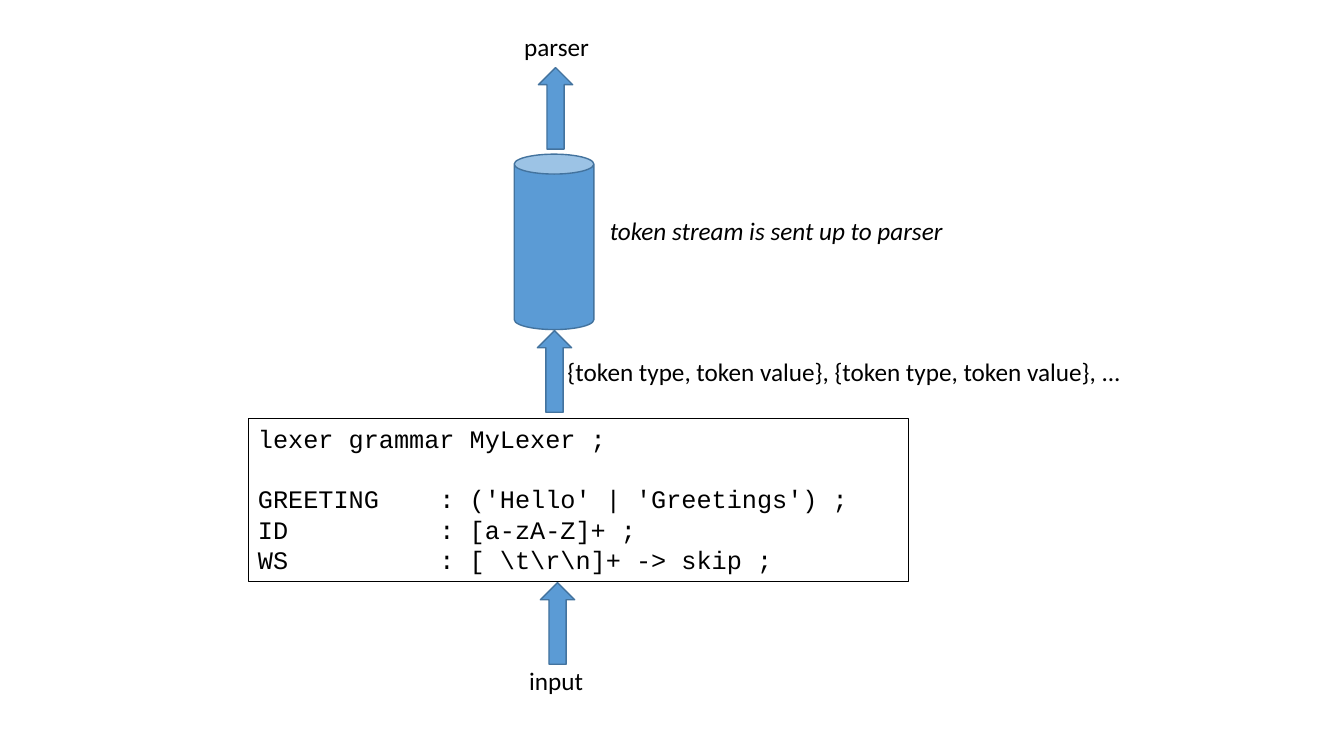
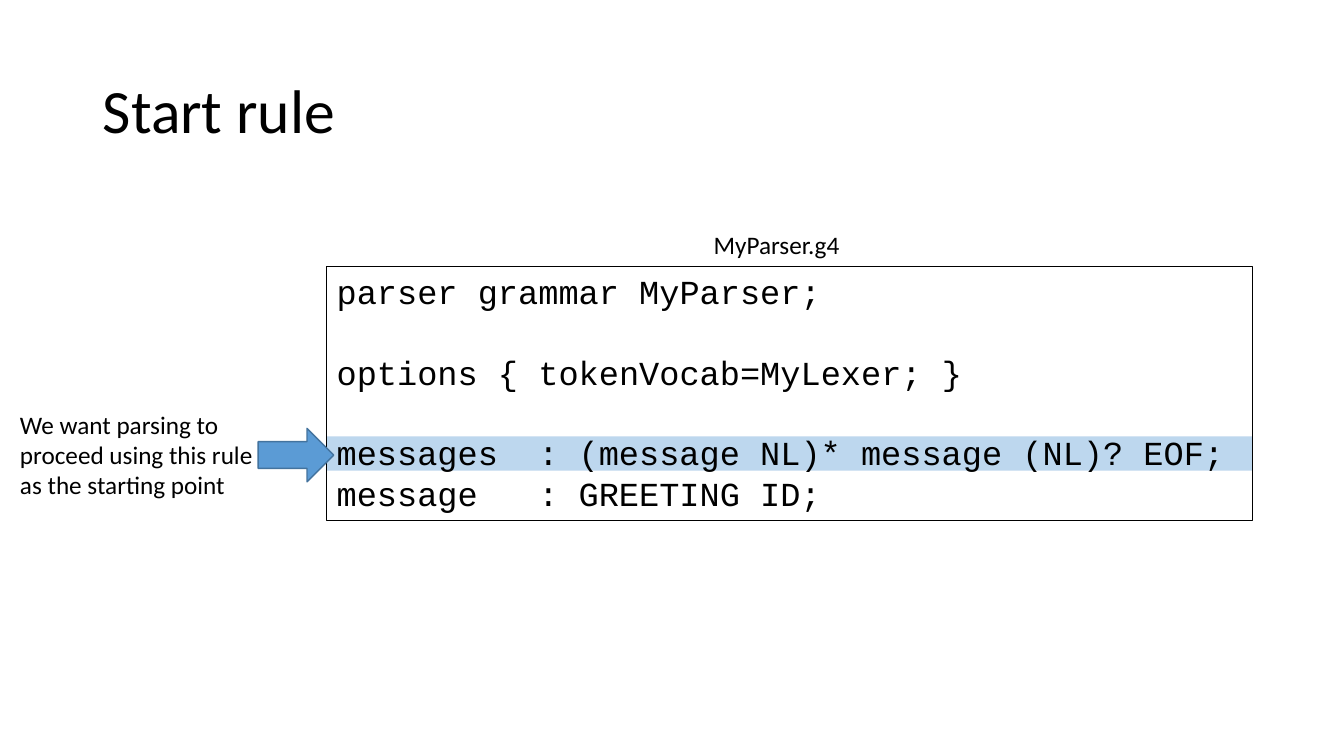
from dataclasses import dataclass

from lxml import etree
from pptx import Presentation
from pptx.dml.color import RGBColor
from pptx.enum.shapes import MSO_SHAPE
from pptx.enum.text import MSO_ANCHOR, PP_ALIGN
from pptx.oxml.ns import qn
from pptx.util import Inches, Pt

RECTANGLE, CYLINDER = MSO_SHAPE.RECTANGLE, MSO_SHAPE.CAN
UP_ARROW, RIGHT_ARROW = MSO_SHAPE.UP_ARROW, MSO_SHAPE.RIGHT_ARROW
LEFT, TOP, MIDDLE = PP_ALIGN.LEFT, MSO_ANCHOR.TOP, MSO_ANCHOR.MIDDLE

BLACK, BLUE, EDGE_BLUE, PALE_BLUE = "000000", "5B9BD5", "43739E", "BDD7EE"
BODY_FONT, CODE_FONT = "Calibri", "Courier New"
LABEL_SIZE, TITLE_SIZE = 18, 44
LABEL_HEIGHT = 0.4
LINE_RATIO = 1.2
CHAR_RATIO = 0.6
TITLE_ONLY, BLANK = 5, 6


@dataclass
class Box:
    left: float
    top: float
    width: float
    height: float

    def inner(self, column, row, width, height):
        return Box(self.left + column, self.top + row, width, height)

    def lengths(self):
        return [Inches(v) for v in (self.left, self.top, self.width, self.height)]


SLIDE = Box(0, 0, 13.33, 7.5)


def colour(hex_text):
    return RGBColor.from_string(hex_text)


def set_attributes(target, values):
    for name, value in values.items():
        setattr(target, name, value)


def write(paragraph, text, size, font=BODY_FONT, italic=False):
    run = paragraph.add_run()
    run.text = text
    set_attributes(run.font, {"name": font, "size": Pt(size), "italic": italic})
    run.font.color.rgb = colour(BLACK)
    paragraph.alignment = LEFT


def add_figure(slide, kind, box, fill=None, line=None, weight=1):
    figure = slide.shapes.add_shape(kind, *box.lengths())
    figure.shadow.inherit = False
    if fill:
        figure.fill.solid()
        figure.fill.fore_color.rgb = colour(fill)
    else:
        figure.fill.background()
    if line:
        figure.line.color.rgb = colour(line)
        figure.line.width = Pt(weight)
    else:
        figure.line.fill.background()
    return figure


def add_label(slide, box, text, italic=False, wrap=False):
    frame = slide.shapes.add_textbox(*box.lengths()).text_frame
    frame.word_wrap = wrap
    write(frame.paragraphs[0], text, LABEL_SIZE, italic=italic)


def add_tab_stop(paragraph, position):
    stops = etree.SubElement(paragraph._p.get_or_add_pPr(), qn("a:tabLst"))
    etree.SubElement(stops, qn("a:tab"), pos=str(position), algn="l")


def add_code(slide, box, blocks, size, tab_column):
    frame = add_figure(slide, RECTANGLE, box, line=BLACK, weight=0.75).text_frame
    set_attributes(frame, {"word_wrap": True, "vertical_anchor": TOP})
    paragraph = frame.paragraphs[0]
    for block_number, block in enumerate(blocks):
        for line_number, text in enumerate(block):
            if block_number or line_number:
                paragraph = frame.add_paragraph()
            opens_block = block_number and not line_number
            paragraph.space_before = Pt(size * LINE_RATIO if opens_block else 0)
            write(paragraph, text, size, CODE_FONT)
            add_tab_stop(paragraph, Pt(tab_column * size * CHAR_RATIO))


def add_title(slide, box, text):
    title = slide.shapes.title
    names = ("left", "top", "width", "height")
    set_attributes(title, dict(zip(names, box.lengths())))
    title.text_frame.vertical_anchor = MIDDLE
    paragraph = title.text_frame.paragraphs[0]
    paragraph.line_spacing = 0.9
    write(paragraph, text, TITLE_SIZE)


def add_token_pipeline(slide, box):
    grammar = [
        ["lexer grammar MyLexer ;"],
        [
            "GREETING\t: ('Hello' | 'Greetings') ;",
            "ID\t: [a-zA-Z]+ ;",
            "WS\t: [ \\t\\r\\n]+ -> skip ;",
        ],
    ]
    add_code(slide, box.inner(0, 3.89, 6.55, 1.62), grammar, 18, 12)
    add_figure(slide, CYLINDER, box.inner(2.64, 1.27, 0.79, 1.74), BLUE, EDGE_BLUE)
    for column, row in ((2.88, 0.41), (2.87, 3.02), (2.9, 5.52)):
        arrow = box.inner(column, row, 0.34, 0.81)
        add_figure(slide, UP_ARROW, arrow, BLUE, EDGE_BLUE)
    labels = [
        (2.64, 0, 0.85, "parser", False),
        (3.49, 1.83, 3.54, "token stream is sent up to parser", True),
        (3.07, 3.23, 5.75,
         "{token type, token value}, {token type, token value}, ...", False),
        (2.69, 6.29, 0.74, "input", False),
    ]
    for column, row, width, text, italic in labels:
        add_label(slide, box.inner(column, row, width, LABEL_HEIGHT), text, italic)


def add_start_rule(slide, box):
    grammar = [
        ["parser grammar MyParser;"],
        ["options { tokenVocab=MyLexer; }"],
        [
            "messages\t: (message NL)* message (NL)? EOF;",
            "message\t: GREETING ID;",
        ],
    ]
    code = box.inner(3.14, 0.41, 9.18, 2.52)
    add_figure(slide, RECTANGLE, code.inner(0, 1.69, code.width, 0.34), PALE_BLUE)
    add_code(slide, code, grammar, 24, 10)
    add_label(slide, box.inner(6.88, 0, 1.46, LABEL_HEIGHT), "MyParser.g4")
    pointer = box.inner(2.46, 2.02, 0.75, 0.53)
    add_figure(slide, RIGHT_ARROW, pointer, BLUE, EDGE_BLUE)
    add_label(
        slide,
        box.inner(0, 1.78, 2.56, 1.01),
        "We want parsing to proceed using this rule as the starting point",
        wrap=True,
    )


def main():
    deck = Presentation()
    deck.slide_width, deck.slide_height = SLIDE.lengths()[2:]

    pipeline = deck.slides.add_slide(deck.slide_layouts[BLANK])
    add_token_pipeline(pipeline, SLIDE.inner(2.46, 0.26, 8.82, 6.69))

    start_rule = deck.slides.add_slide(deck.slide_layouts[TITLE_ONLY])
    add_title(start_rule, SLIDE.inner(0.92, 0.4, 11.5, 1.45), "Start rule")
    add_start_rule(start_rule, SLIDE.inner(0.1, 2.23, 12.32, 2.93))

    deck.save("out.pptx")


if __name__ == "__main__":
    main()
